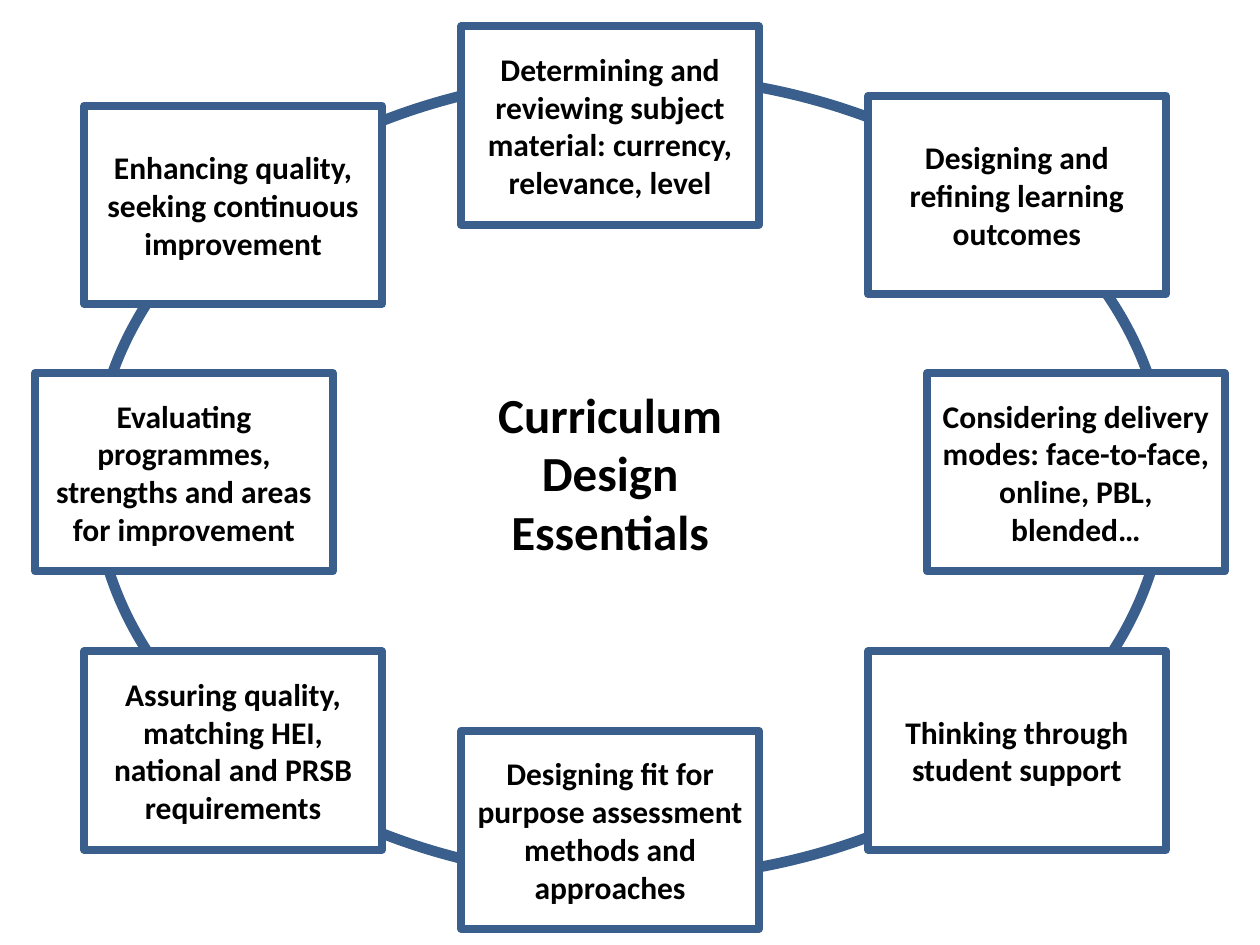
import dataclasses

import pptx
import pptx.dml.color
import pptx.enum.shapes
import pptx.enum.text
import pptx.util

Cm = pptx.util.Cm
Pt = pptx.util.Pt
RGBColor = pptx.dml.color.RGBColor
ShapeType = pptx.enum.shapes.MSO_SHAPE


@dataclasses.dataclass(frozen=True)
class Theme:
    font: str = "Calibri"
    text: RGBColor = RGBColor(0x00, 0x00, 0x00)
    paper: RGBColor = RGBColor(0xFF, 0xFF, 0xFF)
    outline: RGBColor = RGBColor(0x3A, 0x5F, 0x8C)
    title_size: int = 28
    stage_size: int = 18
    ring_width: float = 6
    border_width: float = 4.5


@dataclasses.dataclass(frozen=True)
class Box:
    left: float
    top: float
    width: float
    height: float

    def inner(self, left, top, width, height):
        return Box(self.left + left, self.top + top, width, height)

    def lengths(self):
        return [Cm(value) for value in (self.left, self.top, self.width, self.height)]


THEME = Theme()
CARD_WIDTH, CARD_HEIGHT = 6, 4
CENTRE_LEFT, MIDDLE_TOP = 9.3, 7.52
INNER_LEFT, INNER_RIGHT = 1.7, 17.5
LOWER_TOP = 13.13

STAGES = [
    (0.71, MIDDLE_TOP, "Evaluating programmes, strengths and areas for improvement"),
    (18.69, MIDDLE_TOP, "Considering delivery modes: face-to-face, online, PBL, blended…"),
    (CENTRE_LEFT, 0.53, "Determining and reviewing subject material: currency, relevance, level"),
    (CENTRE_LEFT, 14.73, "Designing fit for purpose assessment methods and approaches"),
    (INNER_LEFT, 2.13, "Enhancing quality, seeking continuous improvement"),
    (INNER_RIGHT, 1.93, "Designing and refining learning outcomes"),
    (INNER_LEFT, LOWER_TOP, "Assuring quality, matching HEI, national and PRSB requirements"),
    (INNER_RIGHT, LOWER_TOP, "Thinking through student support"),
]
TITLE_LINES = ["Curriculum", "Design", "Essentials"]


def paint(shape, line_color, line_width):
    shape.fill.solid()
    shape.fill.fore_color.rgb = THEME.paper
    shape.line.color.rgb = line_color
    shape.line.width = Pt(line_width)


def write(shape, lines, size):
    frame = shape.text_frame
    frame.word_wrap = True
    frame.auto_size = pptx.enum.text.MSO_AUTO_SIZE.NONE
    frame.vertical_anchor = pptx.enum.text.MSO_ANCHOR.MIDDLE
    for index, line in enumerate(lines):
        paragraph = frame.add_paragraph() if index else frame.paragraphs[0]
        paragraph.alignment = pptx.enum.text.PP_ALIGN.CENTER
        run = paragraph.add_run()
        run.text = line
        run.font.name = THEME.font
        run.font.size = Pt(size)
        run.font.bold = True
        run.font.color.rgb = THEME.text


def add_outlined_shape(slide, shape_type, box, line_width):
    shape = slide.shapes.add_shape(shape_type, *box.lengths())
    shape.shadow.inherit = False
    paint(shape, THEME.outline, line_width)
    return shape


def add_cycle(slide, box):
    ring = box.inner(1.9, 1.52, 21.6, 16.2)
    add_outlined_shape(slide, ShapeType.OVAL, ring, THEME.ring_width)
    for left, top, label in STAGES:
        card = box.inner(left, top, CARD_WIDTH, CARD_HEIGHT)
        shape = add_outlined_shape(slide, ShapeType.RECTANGLE, card, THEME.border_width)
        write(shape, [label], THEME.stage_size)


def place_title(slide, box):
    title = slide.shapes.title
    title.left, title.top, title.width, title.height = box.lengths()
    paint(title, THEME.paper, THEME.border_width)
    write(title, TITLE_LINES, THEME.title_size)
    title.element.getparent().append(title.element)


def main():
    presentation = pptx.Presentation()
    presentation.slide_width = Cm(25.4)
    presentation.slide_height = Cm(19.05)
    slide = presentation.slides.add_slide(presentation.slide_layouts.get_by_name("Title Only"))
    page = Box(0, 0, 25.4, 19.05)
    add_cycle(slide, page)
    place_title(slide, page.inner(CENTRE_LEFT, MIDDLE_TOP, CARD_WIDTH, CARD_HEIGHT))
    presentation.save("out.pptx")


if __name__ == "__main__":
    main()
